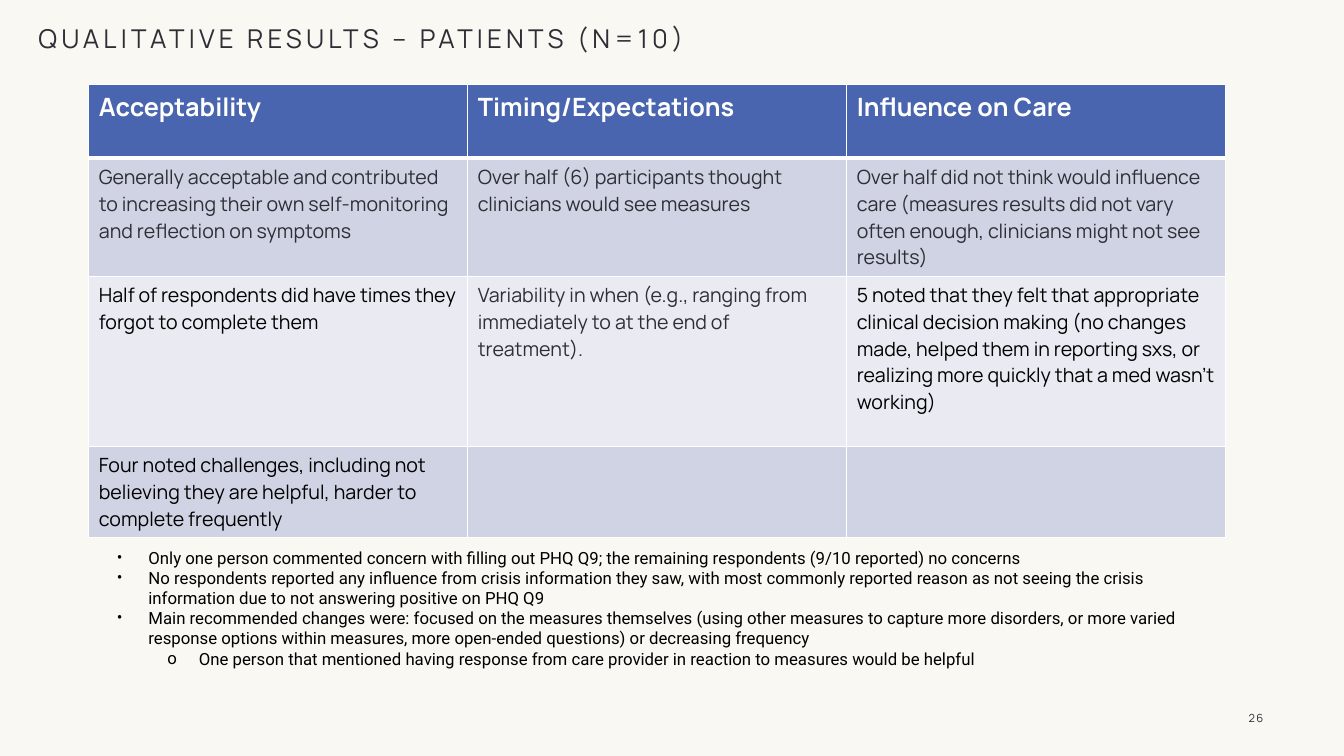
from dataclasses import dataclass

from lxml import etree
from pptx import Presentation
from pptx.dml.color import RGBColor
from pptx.enum.text import MSO_ANCHOR, MSO_AUTO_SIZE, PP_ALIGN
from pptx.oxml.ns import qn
from pptx.util import Pt

LEFT = PP_ALIGN.LEFT
CENTER = PP_ALIGN.CENTER
TOP = MSO_ANCHOR.TOP
MIDDLE = MSO_ANCHOR.MIDDLE
BOTTOM = MSO_ANCHOR.BOTTOM
NO_FIT = MSO_AUTO_SIZE.NONE
GROW = MSO_AUTO_SIZE.SHAPE_TO_FIT_TEXT

CREAM = RGBColor(0xFA, 0xF8, 0xF2)
INK = RGBColor(0x2E, 0x2E, 0x36)
BLACK = RGBColor(0, 0, 0)
WHITE = RGBColor(0xFF, 0xFF, 0xFF)
BLUE = RGBColor(0x49, 0x65, 0xAF)
LAVENDER = RGBColor(0xD0, 0xD3, 0xE3)
PALE = RGBColor(0xE9, 0xEA, 0xF2)

HEADING_FONT = "Manrope"
BODY_FONT = "Roboto"


@dataclass
class Style:
    size: float
    color: RGBColor
    font: str = HEADING_FONT
    bold: bool = False
    spacing: float = 0


@dataclass
class Row:
    height: float
    fill: RGBColor
    texts: tuple
    styles: tuple


@dataclass
class Bullet:
    text: str
    level: int = 0


TITLE = Style(18.5, INK, spacing=3)
NUMBER = Style(8, INK, spacing=1)
HEADER = Style(18, WHITE, bold=True)
GREY = Style(14, INK)
DARK = Style(14, BLACK)
NOTE = Style(12, BLACK, BODY_FONT)

ROWS = [
    Row(52.5, BLUE, ("Acceptability", "Timing/Expectations", "Influence on Care"), (HEADER,) * 3),
    Row(84.3, LAVENDER, (
        "Generally acceptable and contributed to increasing their own self-monitoring "
        "and reflection on symptoms",
        "Over half (6) participants thought clinicians would see measures",
        "Over half did not think would influence care (measures results did not vary "
        "often enough, clinicians might not see results)",
    ), (GREY,) * 3),
    Row(121.8, PALE, (
        "Half of respondents did have times they forgot to complete them",
        "Variability in when (e.g., ranging from immediately to at the end of treatment).",
        "5 noted that they felt that appropriate clinical decision making (no changes made, "
        "helped them in reporting sxs, or realizing more quickly that a med wasn’t working)",
    ), (DARK, GREY, DARK)),
    Row(65, LAVENDER, (
        "Four noted challenges, including not believing they are helpful, harder to "
        "complete frequently", "", "",
    ), (DARK,) * 3),
]

BULLETS = [
    Bullet("Only one person commented concern with filling out PHQ Q9; the remaining "
           "respondents (9/10 reported) no concerns"),
    Bullet("No respondents reported any influence from crisis information they saw, with "
           "most commonly reported reason as not seeing the crisis information due to not "
           "answering positive on PHQ Q9"),
    Bullet("Main recommended changes were: focused on the measures themselves (using other "
           "measures to capture more disorders, or more varied response options within "
           "measures, more open-ended questions) or decreasing frequency"),
    Bullet("One person that mentioned having response from care provider in reaction to "
           "measures would be helpful", 1),
]


def add_span(para, text: str, style: Style) -> None:
    span = para.add_run()
    span.text = text
    span.font.name = style.font
    span.font.size = Pt(style.size)
    span.font.bold = style.bold
    span.font.color.rgb = style.color
    if style.spacing:
        span._r.get_or_add_rPr().set("spc", str(int(style.spacing * 100)))


def place(box, left: float, top: float, width: float, height: float) -> None:
    box.left, box.top, box.width, box.height = Pt(left), Pt(top), Pt(width), Pt(height)


def set_border(cell, side: str, width: float) -> None:
    line = etree.SubElement(cell._tc.get_or_add_tcPr(), qn(f"a:ln{side}"), w=str(Pt(width)))
    fill = etree.SubElement(line, qn("a:solidFill"))
    etree.SubElement(fill, qn("a:srgbClr"), val=str(WHITE))


def add_title(page) -> None:
    box = page.shapes.title
    place(box, 20.2, -27.4, 789, 69.1)
    frame = box.text_frame
    frame.vertical_anchor = BOTTOM
    frame.auto_size = NO_FIT
    para = frame.paragraphs[0]
    para.alignment = LEFT
    para.line_spacing = 1.2
    add_span(para, "QUALITATIVE RESULTS – PATIENTS (N=10)", TITLE)


def add_results(page) -> None:
    height = sum(row.height for row in ROWS)
    table = page.shapes.add_table(
        len(ROWS), 3, Pt(63.4), Pt(60.6), Pt(812.1), Pt(height)).table
    for column in table.columns:
        column.width = Pt(270.7)
    for index, row in enumerate(ROWS):
        table.rows[index].height = Pt(row.height)
        for position, (text, style) in enumerate(zip(row.texts, row.styles)):
            cell = table.cell(index, position)
            widths = {"L": 1, "R": 1, "T": 3 if index == 1 else 1, "B": 3 if index == 0 else 1}
            for side, width in widths.items():
                set_border(cell, side, width)
            cell.fill.solid()
            cell.fill.fore_color.rgb = row.fill
            if text:
                add_span(cell.text_frame.paragraphs[0], text, style)


def add_bullets(page) -> None:
    box = page.placeholders[1]
    place(box, 76.3, 387.4, 784.8, 118.8)
    frame = box.text_frame
    frame.vertical_anchor = TOP
    frame.auto_size = GROW
    for index, bullet in enumerate(BULLETS):
        para = frame.add_paragraph() if index else frame.paragraphs[0]
        para.level = bullet.level
        para.alignment = LEFT
        para.space_before = Pt(0)
        properties = para._p.get_or_add_pPr()
        properties.set("marL", str(Pt(22.5 + 36 * bullet.level)))
        properties.set("indent", str(Pt(-22.5)))
        etree.SubElement(properties, qn("a:buFont"), typeface=BODY_FONT)
        etree.SubElement(properties, qn("a:buChar"), char="•o"[bullet.level])
        add_span(para, bullet.text, NOTE)


def add_page_number(page) -> None:
    box = page.shapes.add_textbox(Pt(879.8), Pt(498.2), Pt(34.6), Pt(28.8))
    frame = box.text_frame
    frame.word_wrap = True
    frame.vertical_anchor = MIDDLE
    para = frame.paragraphs[0]
    para.alignment = CENTER
    add_span(para, "26", NUMBER)


def main() -> None:
    deck = Presentation()
    deck.slide_width, deck.slide_height = Pt(960), Pt(540)
    page = deck.slides.add_slide(deck.slide_layouts[1])
    page.background.fill.solid()
    page.background.fill.fore_color.rgb = CREAM
    add_title(page)
    add_page_number(page)
    add_results(page)
    add_bullets(page)
    deck.save("out.pptx")


if __name__ == "__main__":
    main()
